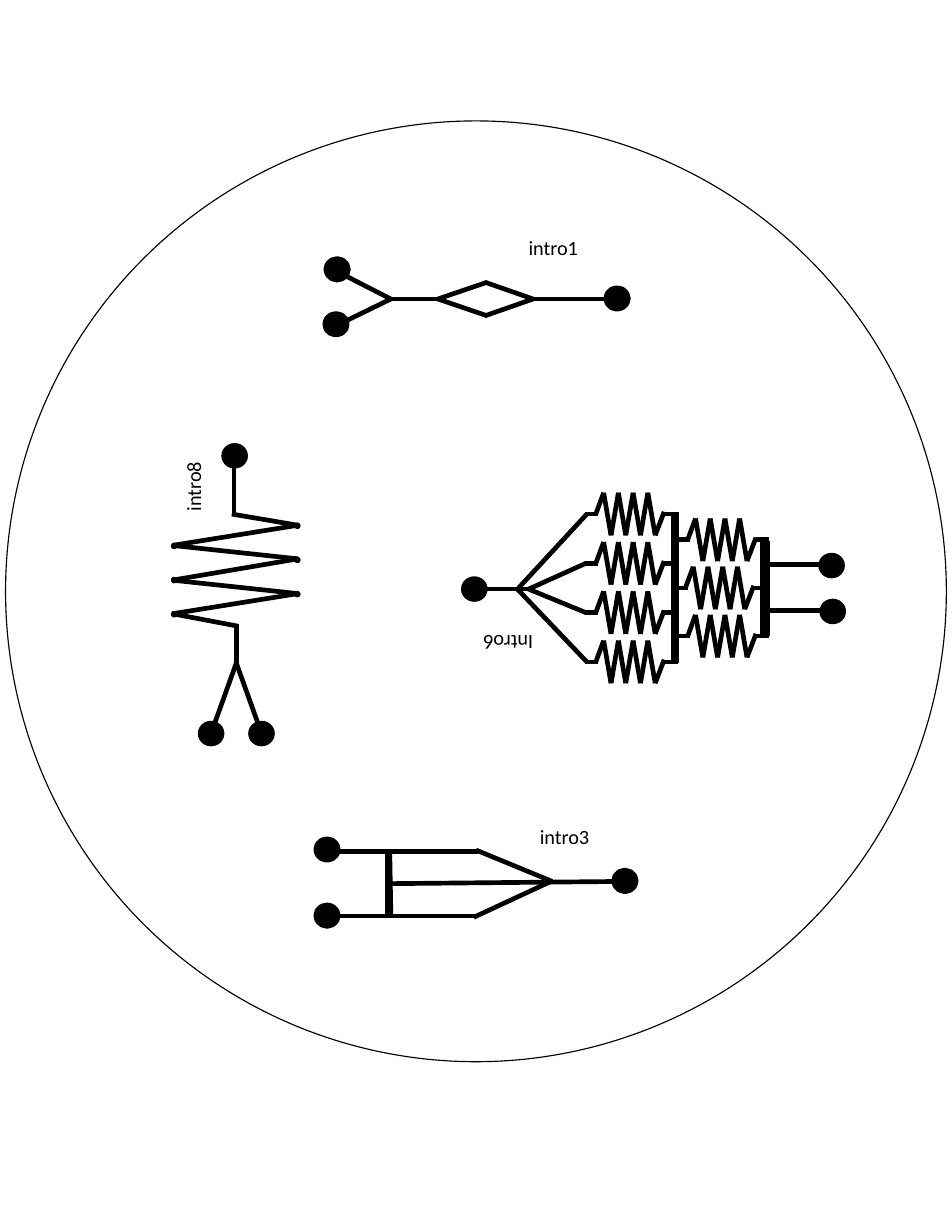
from dataclasses import dataclass
from itertools import pairwise

from lxml.etree import SubElement
from pptx import Presentation
from pptx.dml.color import RGBColor as Rgb
from pptx.enum.shapes import MSO_CONNECTOR as Link, MSO_SHAPE as Kind
from pptx.enum.text import MSO_AUTO_SIZE as Fit
from pptx.oxml.ns import qn
from pptx.util import Inches, Pt

Point = tuple[float, float]
BLACK = "000000"


@dataclass
class Label:
    text: str
    left: float
    top: float
    turn: int = 0


@dataclass
class Dot:
    left: float
    top: float
    width: float = 0.21
    height: float = 0.2
    line: float = 2


deck = Presentation()
deck.slide_width, deck.slide_height = Inches(8.5), Inches(11)
slide = deck.slides.add_slide(deck.slide_layouts[6])
shapes = slide.shapes


def paint(part, color: str) -> None:
    part.solid()
    part.fore_color.rgb = Rgb.from_string(color)


def oval(dot: Dot, solid: bool = True) -> None:
    shape = shapes.add_shape(Kind.OVAL, Inches(dot.left), Inches(dot.top),
                             Inches(dot.width), Inches(dot.height))
    shape.shadow.inherit = False
    if solid:
        paint(shape.fill, BLACK)
    else:
        shape.fill.background()
    paint(shape.line.fill, BLACK)
    shape.line.width = Pt(dot.line)


def port(left: float, top: float) -> None:
    """Small dot with a thick outline."""
    oval(Dot(left, top, 0.16, 0.15, 6))


def trace(*points: Point) -> None:
    """Join the points with straight channels."""
    for start, end in pairwise(points):
        line = shapes.add_connector(Link.STRAIGHT, *map(Inches, start + end))
        paint(line.line.fill, BLACK)
        line.line.width = Pt(3)
        SubElement(line._element.spPr, qn("a:effectLst"))


def write(label: Label) -> None:
    box = shapes.add_textbox(Inches(label.left), Inches(label.top),
                             Inches(0.7), Inches(0.33))
    box.rotation = label.turn
    frame = box.text_frame
    frame.word_wrap = False
    frame.auto_size = Fit.SHAPE_TO_FIT_TEXT
    frame.margin_left = frame.margin_right = Inches(0.11)
    frame.margin_top = frame.margin_bottom = Inches(0.06)
    run = frame.paragraphs[0].add_run()
    run.text = label.text
    run.font.size = Pt(13)
    run.font.name = "Calibri"
    paint(run.font.fill, BLACK)


def mixer(left: float, mid: float) -> None:
    """Zigzag channel with a short lead at each end."""
    trace((left, mid), (left + 0.12, mid))
    peaks = [(left + 0.17 + 0.46 * i / 7, mid + (0.19 if i % 2 else -0.19))
             for i in range(8)]
    trace((left + 0.1, mid), *peaks, (left + 0.71, mid - 0.02))
    trace((left + 0.71, mid), (left + 0.83, mid))


# Wafer outline
oval(Dot(0.05, 1.08, 8.4, 8.4, 0.75), solid=False)

# intro3: two inlets, cross bar and three merging channels
write(Label("intro3", 4.71, 7.3))
trace((2.98, 8.18), (4.25, 8.18))
trace((2.87, 7.6), (4.27, 7.6))
trace((3.48, 7.89), (5.58, 7.87))
trace((4.25, 7.59), (4.93, 7.87))
trace((4.23, 8.19), (4.92, 7.87))
trace((3.49, 8.17), (3.48, 7.61))
trace((3.46, 8.17), (3.46, 7.6))
for left, top in [(5.5, 7.79), (2.84, 8.1), (2.84, 7.51)]:
    port(left, top)

# Intro6: fan into four mixers, then three
write(Label("Intro6", 4.17, 5.58, 180))
for left, top in [(7.33, 5.36), (7.32, 4.95), (4.13, 5.16)]:
    oval(Dot(left, top))
for y in (5.45, 5.04):
    trace((6.86, y), (7.42, y))
trace((4.25, 5.26), (4.74, 5.26))
trace((5.24, 5.91), (4.62, 5.26))
trace((5.24, 4.59), (4.63, 5.25))
for y in (5.03, 5.47):
    trace((5.23, y), (4.72, 5.26))
for row in range(4):
    mixer(5.22, 4.59 + 0.44 * row)
for row, left in enumerate((6.04, 6.02, 6.04)):
    mixer(left, 4.82 + 0.43 * row)
for x in (6.01, 6.04):
    trace((x, 4.57), (x, 5.92))
for x in (6.81, 6.85):
    trace((x, 4.83), (x, 5.68))

# intro8: upright zigzag with a forked end
write(Label("intro8", 1.37, 4.16, 270))
trace((2.09, 3.97), (2.09, 4.61))
trace((2.07, 4.59), (2.66, 4.69), (1.54, 4.87), (2.66, 4.99),
      (1.54, 5.18), (2.66, 5.3), (1.54, 5.48), (2.12, 5.59))
trace((2.11, 5.57), (2.11, 5.93))
for x in (1.92, 2.3):
    trace((x, 6.45), (2.11, 5.92))
for left, top in [(1.78, 6.45), (2.23, 6.45), (1.99, 3.97)]:
    oval(Dot(left, top))
for left, first in [(2.64, 4.68), (1.54, 4.86)]:
    for turn in range(3):
        oval(Dot(left, first + 0.305 * turn, 0.03, 0.03))

# intro1: forked inlet and a diamond split
write(Label("intro1", 4.61, 2.04))
for y in (2.52, 2.82):
    trace((4.33, y), (4.76, 2.67))
    trace((4.35, y), (3.91, 2.67))
for y in (2.46, 2.87):
    trace((3.08, y), (3.49, 2.67))
trace((3.49, 2.67), (3.95, 2.67))
trace((4.71, 2.67), (5.43, 2.67))
for left, top in [(5.43, 2.59), (2.93, 2.33), (2.92, 2.82)]:
    port(left, top)

deck.save("out.pptx")
